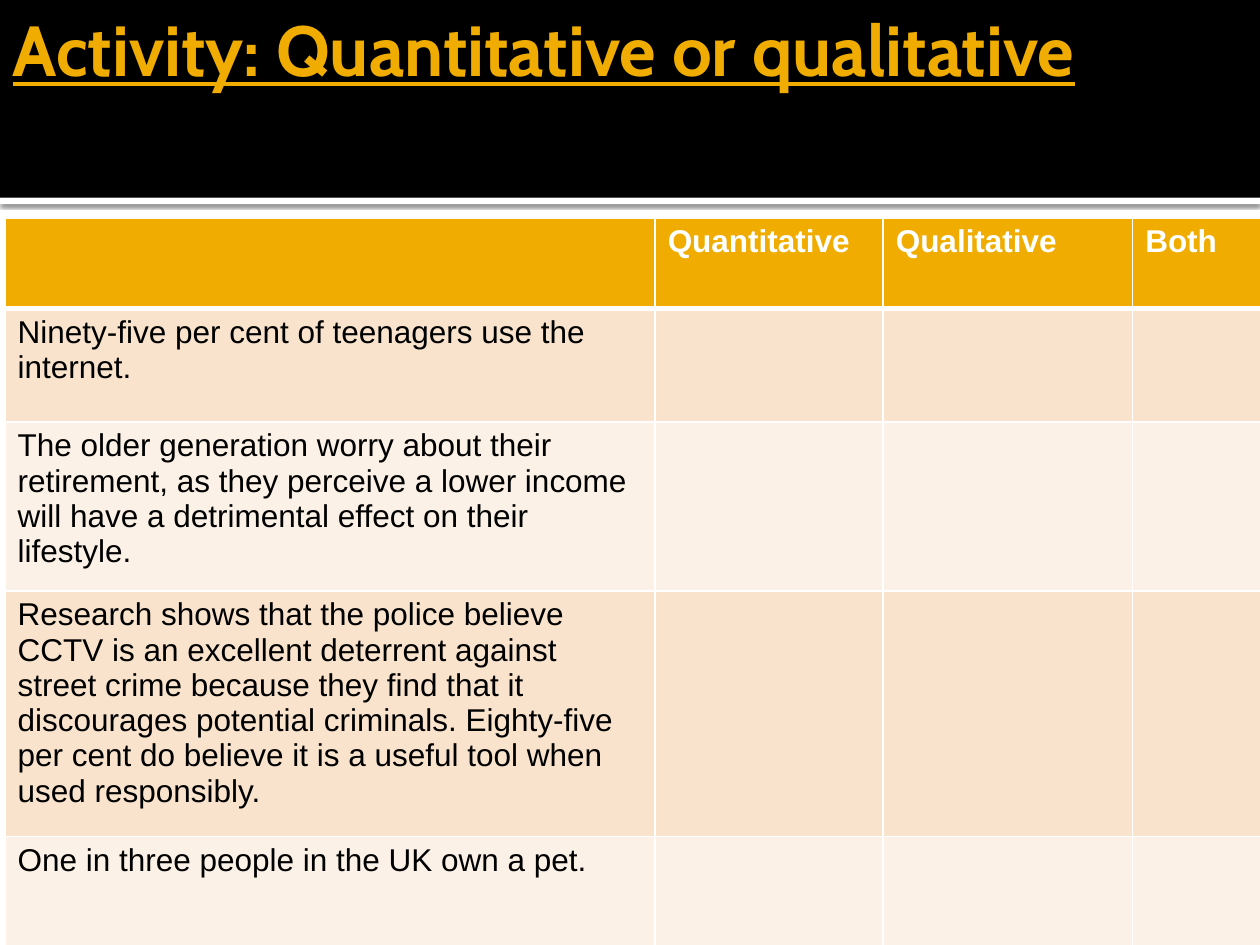
from lxml.etree import SubElement
from pptx import Presentation
from pptx.dml.color import RGBColor
from pptx.enum.shapes import MSO_SHAPE as Shape
from pptx.enum.text import MSO_ANCHOR as Anchor, MSO_AUTO_SIZE as AutoSize, PP_ALIGN as Align
from pptx.oxml.ns import qn
from pptx.util import Inches, Pt

COLORS = {
    "gold": "F0AD00",
    "black": "000000",
    "white": "FFFFFF",
    "peach": "F9E3CC",
    "cream": "FCF1E7",
}
WIDTH, HEIGHT = 10, 7.5
BAND_HEIGHT, STRIPE_HEIGHT = 1.57, 0.05
COLUMNS = [5.16, 1.81, 1.98, 1.05]
ROWS = [0.72, 0.9, 1.34, 1.95, 0.9]
HEADINGS = ["", "Quantitative", "Qualitative", "Both"]
STATEMENTS = [
    "Ninety-five per cent of teenagers use the internet.",
    "The older generation worry about their retirement, as they perceive "
    "a lower income will have a detrimental effect on their lifestyle.",
    "Research shows that the police believe CCTV is an excellent deterrent "
    "against street crime because they find that it discourages potential "
    "criminals. Eighty-five per cent do believe it is a useful tool when "
    "used responsibly.",
    "One in three people in the UK own a pet.",
]


def color(name):
    return RGBColor.from_string(COLORS[name])


def style_text(para, font_name, size, color_name, bold):
    for span in para.runs:
        font = span.font
        font.name, font.size, font.bold = font_name, Pt(size), bold
        font.color.rgb = color(color_name)


def add_band(page, box, fill):
    band = page.shapes.add_shape(Shape.RECTANGLE, *map(Inches, box))
    band.shadow.inherit = False
    band.fill.solid()
    band.fill.fore_color.rgb = color(fill)
    band.line.fill.background()
    return band


def add_shadow(shape, blur, distance, opacity):
    effects = shape._element.spPr.find(qn("a:effectLst"))
    shadow = SubElement(effects, qn("a:outerShdw"), blurRad=str(Pt(blur)),
                        dist=str(Pt(distance)), dir="5400000", rotWithShape="0")
    tint = SubElement(shadow, qn("a:srgbClr"), val=COLORS["black"])
    SubElement(tint, qn("a:alpha"), val=str(opacity * 1000))


def add_header(page, box):
    left, top, width, height = box
    # White stripe with a soft shadow, below the black band
    stripe = add_band(page, (left, top + height, width, STRIPE_HEIGHT), "white")
    add_shadow(stripe, 2.5, 0.8, 60)
    add_band(page, box, "black")

    # Title, brought in front of the band
    title = page.shapes.title
    page.shapes._spTree.append(title._element)
    title.left, title.top = Inches(left), Inches(top)
    title.width, title.height = Inches(width * 0.984), Inches(height * 0.49)
    frame = title.text_frame
    frame.text = "Activity: Quantitative or qualitative"
    frame.auto_size, frame.vertical_anchor = AutoSize.NONE, Anchor.MIDDLE
    frame.margin_left = Inches(0.1)
    frame.margin_top = frame.margin_right = frame.margin_bottom = Inches(0.05)
    para = frame.paragraphs[0]
    para.alignment = Align.LEFT
    style_text(para, "Cabin", 40.5, "gold", True)
    para.runs[0].font.underline = True


def set_borders(cell, widths):
    properties = cell._tc.get_or_add_tcPr()
    for position, (side, width) in enumerate(widths.items()):
        line = properties.makeelement(qn(f"a:{side}"), {"w": str(Pt(width))})
        fill = SubElement(line, qn("a:solidFill"))
        SubElement(fill, qn("a:srgbClr"), val=COLORS["white"])
        properties.insert(position, line)


def add_answer_table(page, box):
    table = page.shapes.add_table(len(ROWS), len(COLUMNS), *map(Inches, box)).table
    for column, share in zip(table.columns, COLUMNS):
        column.width = Inches(box[2] * share / sum(COLUMNS))
    for row, share in zip(table.rows, ROWS):
        row.height = Inches(box[3] * share / sum(ROWS))

    contents = [HEADINGS] + [[text, "", "", ""] for text in STATEMENTS]
    for r, texts in enumerate(contents):
        heading = r == 0
        fill = "gold" if heading else ("cream", "peach")[r % 2]
        for c, text in enumerate(texts):
            cell = table.cell(r, c)
            cell.fill.solid()
            cell.fill.fore_color.rgb = color(fill)
            # The heading row is set off by a thicker rule
            set_borders(cell, {"lnL": 1, "lnR": 1, "lnT": 3 if r == 1 else 1,
                               "lnB": 3 if heading else 1})
            if text:
                cell.text_frame.text = text
                style_text(cell.text_frame.paragraphs[0], "Arial", 18,
                           "white" if heading else "black", heading)


def main():
    deck = Presentation()
    deck.slide_width, deck.slide_height = Inches(WIDTH), Inches(HEIGHT)
    page = deck.slides.add_slide(deck.slide_layouts[5])
    page.background.fill.solid()
    page.background.fill.fore_color.rgb = color("white")
    add_header(page, (0, 0, WIDTH, BAND_HEIGHT))
    add_answer_table(page, (0.04, 1.73, sum(COLUMNS), sum(ROWS)))
    deck.save("out.pptx")


if __name__ == "__main__":
    main()
